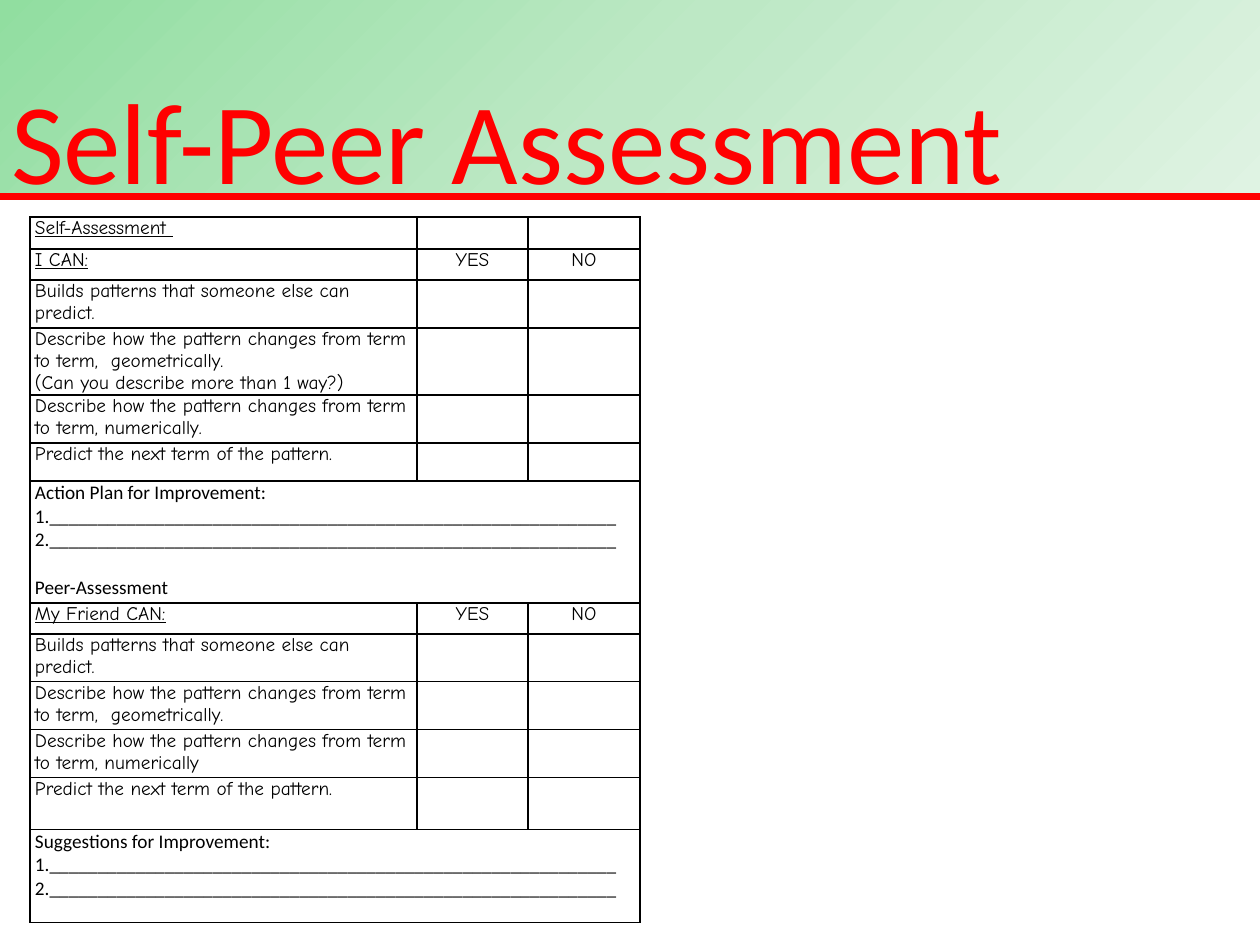
from copy import deepcopy

from lxml.etree import SubElement
from pptx import Presentation
from pptx.dml.color import RGBColor
from pptx.enum.shapes import MSO_CONNECTOR
from pptx.enum.text import MSO_ANCHOR, MSO_AUTO_SIZE, PP_ALIGN
from pptx.oxml.ns import qn
from pptx.util import Pt

EMU_PER_PX = 914400 // 126
COLORS = {
    "accent": "FF0000",
    "text": "000000",
    "border": "000000",
    "gradient_start": "91DEA0",
    "gradient_middle": "BDE8C5",
    "gradient_end": "DFF3E3",
}
CHECKLIST_FONT = "Comic Neue"
PLAN_FONT = "Calibri"
TEXT_SIZE = 11
COLUMN_WIDTHS = [387, 111, 112]
ROW_HEIGHTS = [32, 31, 48, 67, 48, 38, 122, 31, 48, 48, 48, 52, 93]
BUILDS = "Builds patterns that someone else can predict."
GEOMETRICALLY = "Describe how the pattern changes from term to term,  geometrically."
NUMERICALLY = "Describe how the pattern changes from term to term, numerically"
PREDICT = "Predict the next term of the pattern."
BLANK = "_" * 59
PLAN_LINES = f"\v1.{BLANK}\v2.{BLANK}"
ROWS = [
    ["Self-Assessment ", "", ""],
    ["I CAN:", "YES", "NO"],
    [BUILDS, "", ""],
    [f"{GEOMETRICALLY}\n(Can you describe more than 1 way?)", "", ""],
    [f"{NUMERICALLY}.", "", ""],
    [PREDICT, "", ""],
    [f"Action Plan for Improvement:{PLAN_LINES}\nPeer-Assessment"],
    ["My Friend CAN:", "YES", "NO"],
    [BUILDS, "", ""],
    [GEOMETRICALLY, "", ""],
    [NUMERICALLY, "", ""],
    [PREDICT, "", ""],
    [f"Suggestions for Improvement:{PLAN_LINES}"],
]
UNDERLINED_ROWS = {0, 1, 7}


def px(length):
    """Convert whole pixels to EMU."""
    return length * EMU_PER_PX


def color(name):
    """Look up a named colour."""
    return RGBColor.from_string(COLORS[name])


def format_runs(paragraph, font_name, size, color_name, underline=False):
    """Apply one font to every run of a paragraph."""
    for run in paragraph.runs:
        run.font.name = font_name
        run.font.size = Pt(size)
        run.font.color.rgb = color(color_name)
        run.font.underline = underline


def fill_gradient(shape):
    """Fill a shape with the diagonal green gradient."""
    fill = shape.fill
    fill.gradient()
    fill.gradient_angle = 315
    first = fill.gradient_stops[0]._gs
    first.addnext(deepcopy(first))
    names = ["gradient_start", "gradient_middle", "gradient_end"]
    for index, (stop, name) in enumerate(zip(fill.gradient_stops, names)):
        stop.position = index / 2
        stop.color.rgb = color(name)


def add_title(slide):
    """Place the title banner across the top of the slide."""
    title = slide.shapes.title
    title.left, title.top, title.width, title.height = 0, 0, px(1260), px(197)
    fill_gradient(title)
    frame = title.text_frame
    frame.text = "Self-Peer Assessment"
    frame.auto_size = MSO_AUTO_SIZE.NONE
    frame.word_wrap = True
    frame.vertical_anchor = MSO_ANCHOR.TOP
    frame.margin_left, frame.margin_top, frame.margin_bottom = px(11), px(70), 0
    frame.paragraphs[0].alignment = PP_ALIGN.LEFT
    format_runs(frame.paragraphs[0], "Calibri", 65.7, "accent")


def add_rule(slide):
    """Draw the red rule below the title."""
    rule = slide.shapes.add_connector(MSO_CONNECTOR.STRAIGHT, 0, px(197), px(1260), px(197))
    rule.line.color.rgb = color("accent")
    rule.line.width = Pt(4)
    SubElement(rule._element.spPr, qn("a:effectLst"))


def add_borders(cell):
    """Outline all four sides of a cell."""
    properties = cell._tc.get_or_add_tcPr()
    for side in ("lnL", "lnR", "lnT", "lnB"):
        line = SubElement(properties, qn(f"a:{side}"), w=str(Pt(1)))
        solid = SubElement(line, qn("a:solidFill"))
        SubElement(solid, qn("a:srgbClr"), val=COLORS["border"])


def format_cell(cell):
    """Give a cell its borders, margins and empty fill."""
    add_borders(cell)
    cell.fill.background()
    cell.margin_left = cell.margin_right = px(5)
    cell.margin_top = cell.margin_bottom = 0


def write_cell(cell, text, font_name, underline, centered):
    """Write the text of a cell, spacing any later plan paragraph."""
    cell.text_frame.text = text
    for index, paragraph in enumerate(cell.text_frame.paragraphs):
        format_runs(paragraph, font_name, TEXT_SIZE, "text", underline)
        if centered:
            paragraph.alignment = PP_ALIGN.CENTER
        if index and font_name == PLAN_FONT:
            paragraph.space_before = px(24)
        for line_break in paragraph._p.findall(qn("a:br")):
            SubElement(line_break, qn("a:rPr"), sz=str(TEXT_SIZE * 100))
        if not text:
            SubElement(paragraph._p, qn("a:endParaRPr"), sz=str(TEXT_SIZE * 100))


def add_assessment_table(slide):
    """Build the self and peer assessment checklist."""
    frame = slide.shapes.add_table(
        len(ROWS), len(COLUMN_WIDTHS), px(30), px(217), px(sum(COLUMN_WIDTHS)), px(sum(ROW_HEIGHTS))
    )
    table = frame.table
    table.first_row = table.horz_banding = False
    for column, width in zip(table.columns, COLUMN_WIDTHS):
        column.width = px(width)
    for row, height in zip(table.rows, ROW_HEIGHTS):
        row.height = px(height)
    for cell in table.iter_cells():
        format_cell(cell)
    for row_index, texts in enumerate(ROWS):
        is_plan = len(texts) == 1
        if is_plan:
            table.cell(row_index, 0).merge(table.cell(row_index, len(COLUMN_WIDTHS) - 1))
        for column_index, text in enumerate(texts):
            underline = column_index == 0 and row_index in UNDERLINED_ROWS
            font_name = PLAN_FONT if is_plan else CHECKLIST_FONT
            write_cell(table.cell(row_index, column_index), text, font_name, underline, column_index > 0)


def main():
    """Create the presentation and save it."""
    presentation = Presentation()
    presentation.slide_width, presentation.slide_height = px(1260), px(945)
    slide = presentation.slides.add_slide(presentation.slide_layouts[5])
    add_title(slide)
    add_rule(slide)
    add_assessment_table(slide)
    presentation.save("out.pptx")


if __name__ == "__main__":
    main()
